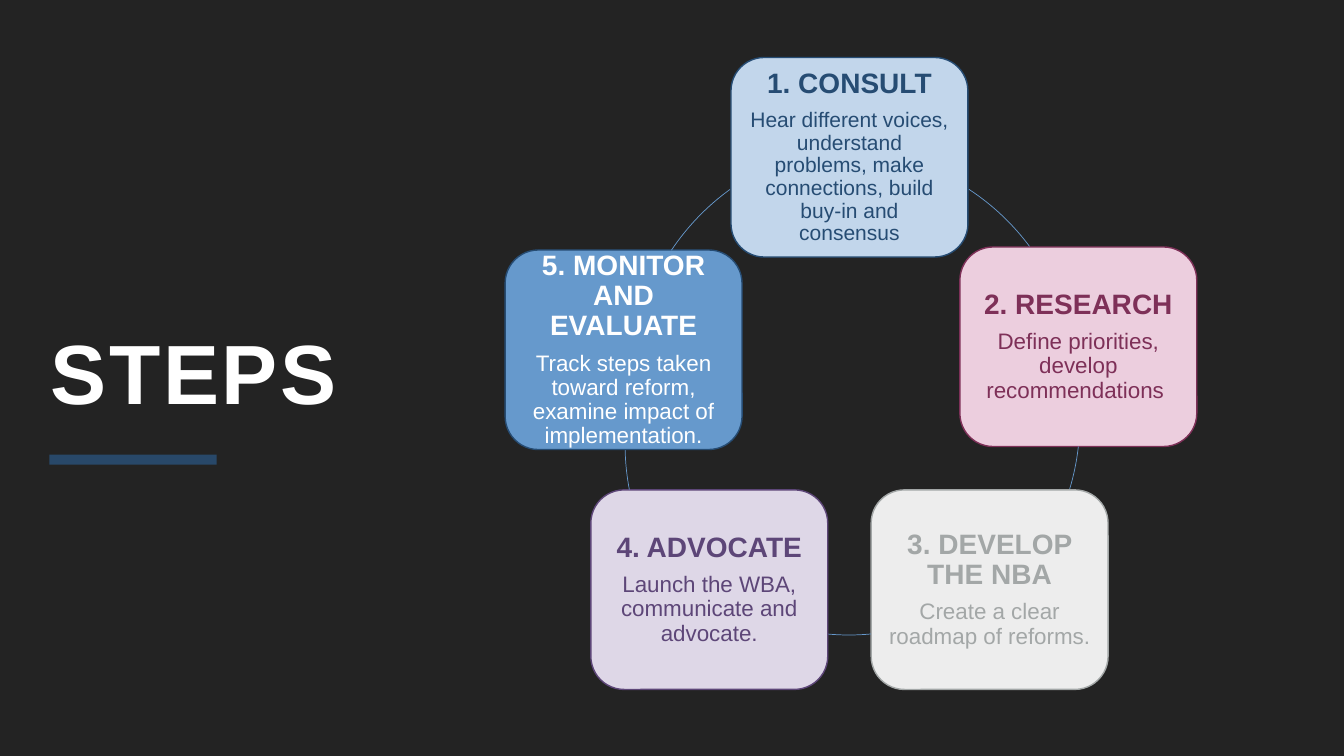
from pptx import Presentation
from pptx import util as u
from pptx.dml.color import RGBColor
from pptx.enum import shapes, text

FONT = "Arial"
BACKGROUND = RGBColor(0x23, 0x23, 0x23)
WHITE = RGBColor(0xFF, 0xFF, 0xFF)
ACCENT = RGBColor(0x28, 0x48, 0x69)
NAVY = RGBColor(0x26, 0x4C, 0x73)
BLUE = RGBColor(0x66, 0x99, 0xCC)
PALE_BLUE = RGBColor(0xC2, 0xD6, 0xEB)
PLUM = RGBColor(0x7E, 0x30, 0x58)
PINK = RGBColor(0xEC, 0xCE, 0xDE)
GREY = RGBColor(0xA3, 0xA7, 0xA7)
PALE_GREY = RGBColor(0xED, 0xED, 0xED)
PURPLE = RGBColor(0x5D, 0x46, 0x78)
LILAC = RGBColor(0xDE, 0xD7, 0xE7)

SLIDE_SIZE = (13.33, 7.5)
TITLE = "STEPS"
TITLE_AREA = (0, 0, 13.33, 4.99)
TITLE_RULE = (0.49, 4.51, 1.66, 0.1)
CARD_SIZE = (2.35, 1.98)
CARD_INSET = 0.08
ARC_DIAMETER = 4.74

# heading, body, body size, card corner, fill, line colour, text colour
STEPS = [
    ("1. CONSULT",
     "Hear different voices, understand problems, make connections, build buy-in and consensus",
     15, (7.25, 0.57), PALE_BLUE, NAVY, NAVY),
    ("2. RESEARCH", "Define priorities, develop recommendations ",
     16, (9.52, 2.45), PINK, PLUM, PLUM),
    ("3. DEVELOP THE NBA", "Create a clear roadmap of reforms. ",
     16, (8.64, 4.86), PALE_GREY, GREY, GREY),
    ("4. ADVOCATE", "Launch the WBA, communicate and advocate.",
     16, (5.86, 4.86), LILAC, PURPLE, PURPLE),
    ("5. MONITOR AND EVALUATE",
     "Track steps taken toward reform, examine impact of implementation.",
     16, (5.01, 2.48), BLUE, NAVY, WHITE),
]

# corner of the arc's circle, then start and end in degrees clockwise from the right
ARCS = [
    ((5.94, 1.49), 303.3, 323.4),
    ((5.97, 1.8), 6.3, 16.9),
    ((6.05, 1.56), 84.7, 95.1),
    ((6.2, 2.04), 169.1, 178.8),
    ((6.26, 1.43), 213.8, 234.1),
]


def inches(values):
    return [u.Inches(value) for value in values]


def set_all(target, values):
    for name, value in values.items():
        setattr(target, name, value)


def add_plain_shape(slide, kind, area, fill=None, line=None, width=1):
    shape = slide.shapes.add_shape(kind, *inches(area))
    shape.shadow.inherit = False
    for fill_format, color in ((shape.fill, fill), (shape.line.fill, line)):
        if color is None:
            fill_format.background()
        else:
            fill_format.solid()
            fill_format.fore_color.rgb = color
    if line is not None:
        shape.line.width = u.Pt(width)
    return shape


def set_frame(frame, anchor, insets):
    """Insets run left, top, right, bottom, in inches."""
    left, top, right, bottom = inches(insets)
    set_all(frame, {"word_wrap": True, "auto_size": text.MSO_AUTO_SIZE.NONE,
                    "vertical_anchor": anchor, "margin_left": left, "margin_top": top,
                    "margin_right": right, "margin_bottom": bottom})


def write(paragraph, words, size, color, bold, align, space_after=0):
    set_all(paragraph, {"alignment": align, "line_spacing": 0.9,
                        "space_after": u.Pt(space_after)})
    run = paragraph.add_run()
    run.text = words
    set_all(run.font, {"name": FONT, "size": u.Pt(size), "bold": bold})
    run.font.color.rgb = color
    return run


def add_title(slide):
    add_plain_shape(slide, shapes.MSO_SHAPE.RECTANGLE, TITLE_RULE, ACCENT)
    frame = slide.shapes.add_textbox(*inches(TITLE_AREA)).text_frame
    set_frame(frame, text.MSO_ANCHOR.BOTTOM, (0.5, 0.5, 0.5, 0.8))
    run = write(frame.paragraphs[0], TITLE, 60, WHITE, True, text.PP_ALIGN.LEFT)
    run.font._element.set("spc", "200")


def add_card(slide, heading, body, body_size, corner, fill, line, color):
    card = add_plain_shape(slide, shapes.MSO_SHAPE.ROUNDED_RECTANGLE,
                           corner + CARD_SIZE, fill, line)
    frame = card.text_frame
    set_frame(frame, text.MSO_ANCHOR.MIDDLE, [CARD_INSET] * 4)
    center = text.PP_ALIGN.CENTER
    write(frame.paragraphs[0], heading, 20, color, True, center, 7)
    write(frame.add_paragraph(), body, body_size, color, False, center)


def add_arc(slide, corner, start, end):
    arc = add_plain_shape(slide, shapes.MSO_SHAPE.ARC,
                          corner + (ARC_DIAMETER, ARC_DIAMETER), line=BLUE, width=0.5)
    for index, degrees in enumerate((start, end)):
        arc.adjustments[index] = degrees * 0.6  # 60000 units a degree, scaled by 100000


def main():
    presentation = Presentation()
    presentation.slide_width, presentation.slide_height = inches(SLIDE_SIZE)
    slide = presentation.slides.add_slide(presentation.slide_layouts[6])
    slide.background.fill.solid()
    slide.background.fill.fore_color.rgb = BACKGROUND
    add_title(slide)
    for step, arc in zip(STEPS, ARCS):
        add_card(slide, *step)
        add_arc(slide, *arc)
    presentation.save("out.pptx")


if __name__ == "__main__":
    main()
